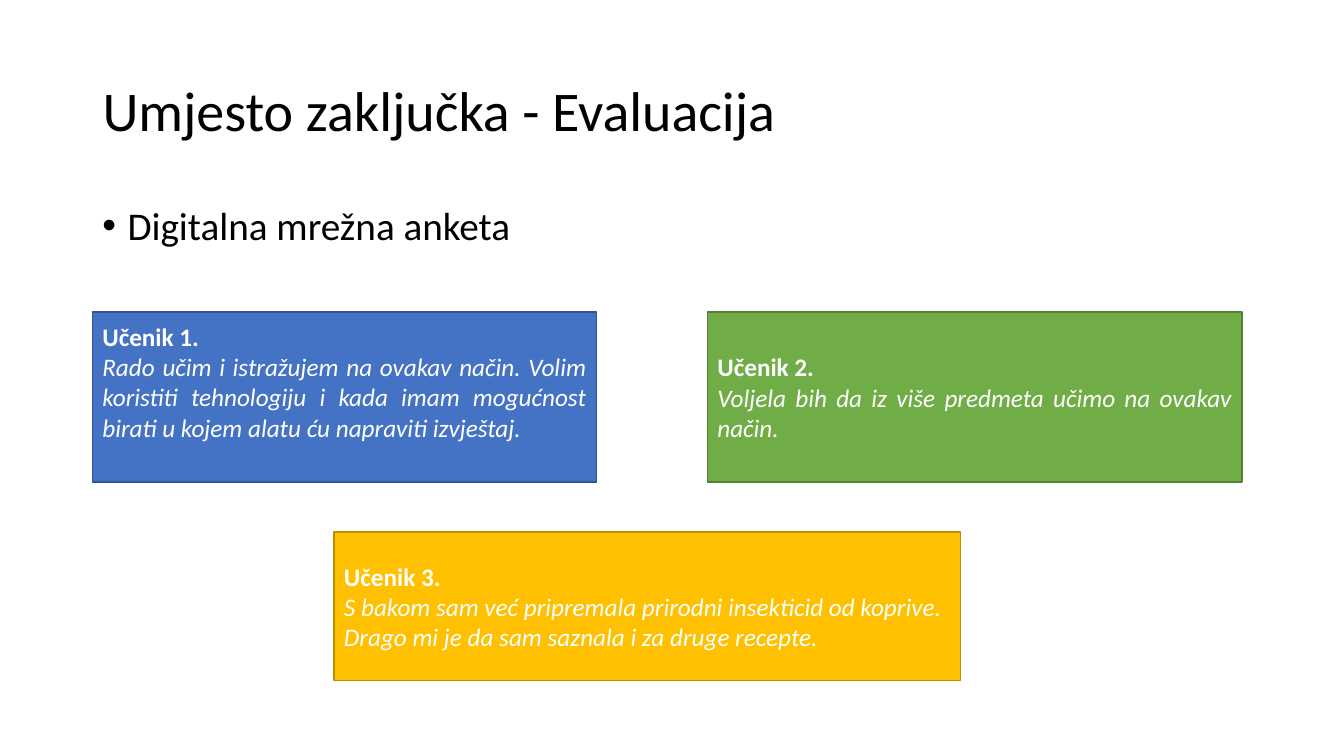
from dataclasses import dataclass

from lxml import etree
from pptx import Presentation
from pptx.dml.color import RGBColor as RGB
from pptx.enum.shapes import MSO_SHAPE as Shape
from pptx.enum.text import MSO_ANCHOR as Anchor, MSO_AUTO_SIZE as AutoSize, PP_ALIGN as Align
from pptx.oxml.ns import qn
from pptx.util import Cm, Pt


@dataclass(frozen=True)
class Theme:
    font: str = "Calibri"
    title_size: int = 40
    bullet_size: int = 28
    quote_size: int = 18
    dark: str = "000000"
    light: str = "FFFFFF"
    blue: tuple = ("4472C4", "325491")
    green: tuple = ("70AD47", "538035")
    gold: tuple = ("FFC000", "BD8E00")


THEME = Theme()


def style_font(paragraph, size, color, bold=False, italic=False):
    for run in paragraph.runs:
        run.font.name = THEME.font
        run.font.size = Pt(size)
        run.font.color.rgb = RGB.from_string(color)
        run.font.bold = bold
        run.font.italic = italic


prs = Presentation()
prs.slide_width, prs.slide_height = Cm(33.87), Cm(19.05)
slide = prs.slides.add_slide(prs.slide_layouts[5])
left, content_width = Cm(2.33), Cm(29.21)

title = slide.shapes.title
title.left, title.top, title.width, title.height = left, Cm(1.01), content_width, Cm(3.68)
title.text_frame.text = "Umjesto zaključka - Evaluacija"
title.text_frame.vertical_anchor = Anchor.MIDDLE
title.text_frame.auto_size = AutoSize.NONE
heading = title.text_frame.paragraphs[0]
heading.alignment = Align.LEFT
heading.line_spacing = 0.9
style_font(heading, THEME.title_size, THEME.dark)

survey = slide.shapes.add_textbox(left, Cm(5.07), content_width, Cm(12.09)).text_frame
survey.word_wrap = True
survey.text = "Digitalna mrežna anketa"
survey_line = survey.paragraphs[0]
survey_line.line_spacing = 0.9
bullet_props = survey_line._p.get_or_add_pPr()
bullet_props.set("marL", str(Cm(0.635)))
bullet_props.set("indent", str(-Cm(0.635)))
etree.SubElement(bullet_props, qn("a:buFont")).set("typeface", "Arial")
etree.SubElement(bullet_props, qn("a:buChar")).set("char", "•")
style_font(survey_line, THEME.bullet_size, THEME.dark)

# left, top, width, height and bottom inset in cm, colours, alignment, quote
answers = [
    (2.33, 7.86, 12.7, 4.29, 0.9, THEME.blue, Align.JUSTIFY,
     "Rado učim i istražujem na ovakav način. Volim koristiti tehnologiju i kada "
     "imam mogućnost birati u kojem alatu ću napraviti izvještaj."),
    (17.83, 7.86, 13.47, 4.29, 0.13, THEME.green, Align.JUSTIFY,
     "Voljela bih da iz više predmeta učimo na ovakav način."),
    (8.42, 13.41, 15.78, 3.74, 0.13, THEME.gold, Align.LEFT,
     "S bakom sam već pripremala prirodni insekticid od koprive. "
     "Drago mi je da sam saznala i za druge recepte."),
]
for number, (x, y, width, height, inset, colors, alignment, quote) in enumerate(answers, 1):
    card = slide.shapes.add_shape(Shape.RECTANGLE, Cm(x), Cm(y), Cm(width), Cm(height))
    card.shadow.inherit = False
    fill_color, line_color = colors
    card.fill.solid()
    card.fill.fore_color.rgb = RGB.from_string(fill_color)
    card.line.color.rgb = RGB.from_string(line_color)
    card.line.width = Pt(1)

    frame = card.text_frame
    frame.word_wrap = True
    frame.vertical_anchor = Anchor.MIDDLE
    frame.margin_bottom = Cm(inset)
    frame.text = f"Učenik {number}.\n{quote}"
    student, answer = frame.paragraphs
    student.alignment = Align.LEFT
    answer.alignment = alignment
    style_font(student, THEME.quote_size, THEME.light, bold=True)
    style_font(answer, THEME.quote_size, THEME.light, italic=True)

prs.save("out.pptx")
